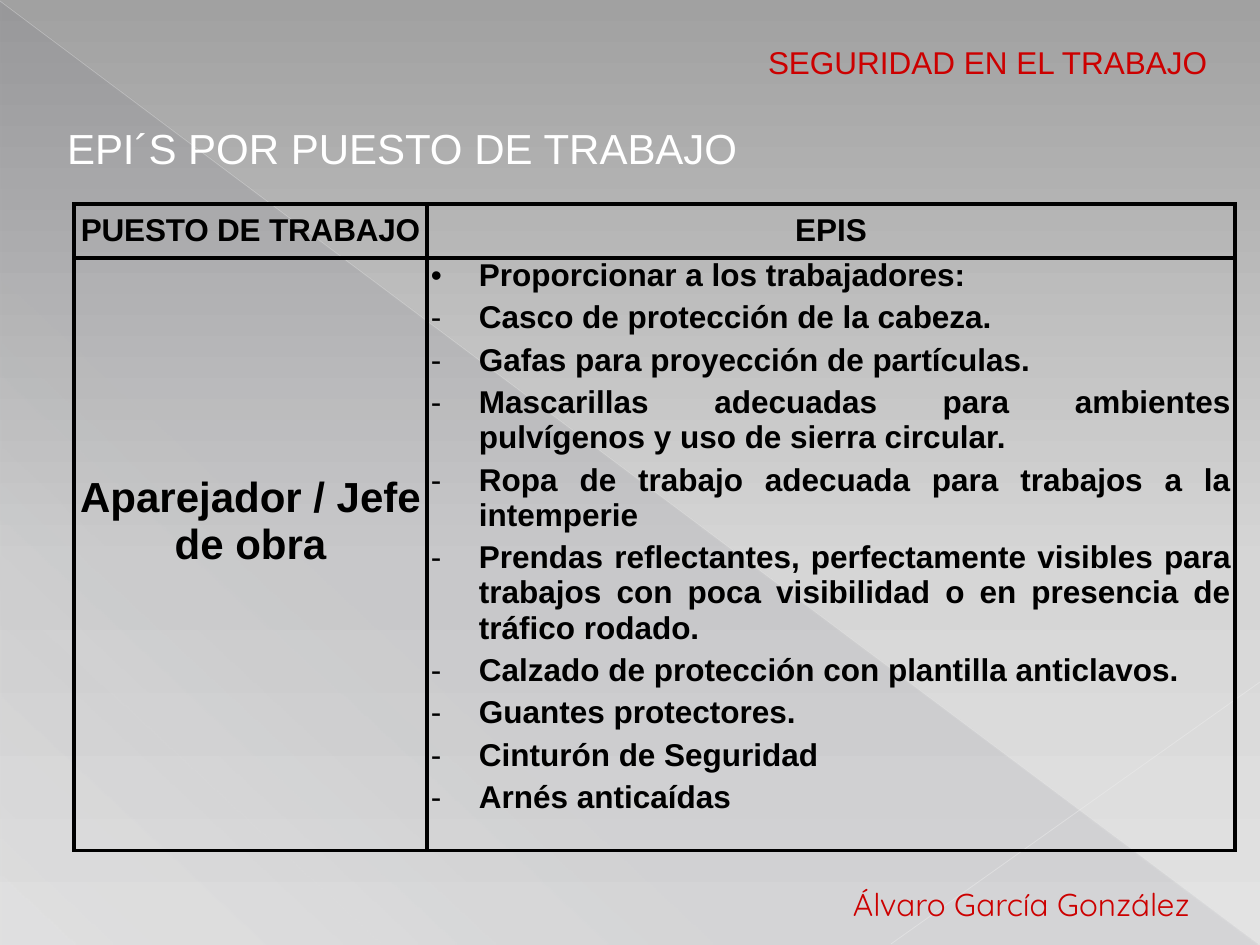
from dataclasses import dataclass

from lxml import etree
from pptx import Presentation
from pptx.dml.color import RGBColor
from pptx.enum.shapes import MSO_CONNECTOR, MSO_SHAPE
from pptx.enum.text import MSO_ANCHOR, PP_ALIGN
from pptx.oxml.ns import qn
from pptx.util import Emu, Pt

STRAIGHT = MSO_CONNECTOR.STRAIGHT
RIGHT_TRIANGLE = MSO_SHAPE.RIGHT_TRIANGLE
TOP, MIDDLE = MSO_ANCHOR.TOP, MSO_ANCHOR.MIDDLE
LEFT, CENTER, JUSTIFY = PP_ALIGN.LEFT, PP_ALIGN.CENTER, PP_ALIGN.JUSTIFY
EMU_PER_PX = 914400 / 126


@dataclass(frozen=True)
class Theme:
    body_font: str = "Arial"
    author_font: str = "Quicksand"
    ink: str = "000000"
    accent: str = "CC0000"
    title: str = "FFFFFF"
    body_size: int = 18
    title_size: int = 24
    border_width: float = 2.25
    background: tuple = ((0, "A1A1A1", 100), (60, "D6D6D6", 100), (100, "E3E3E3", 100))
    triangle: tuple = ((0, "424456", 10), (70, "424456", 8), (100, "424456", 1))


THEME = Theme()

EQUIPMENT = [
    ("•", "Proporcionar a los trabajadores:"),
    ("-", "Casco de protección de la cabeza."),
    ("-", "Gafas para proyección de partículas."),
    ("-", "Mascarillas adecuadas para ambientes pulvígenos y uso de sierra circular."),
    ("-", "Ropa de trabajo adecuada para trabajos a la intemperie"),
    ("-", "Prendas reflectantes, perfectamente visibles para trabajos con poca "
          "visibilidad o en presencia de tráfico rodado."),
    ("-", "Calzado de protección con plantilla anticlavos."),
    ("-", "Guantes protectores."),
    ("-", "Cinturón de Seguridad"),
    ("-", "Arnés anticaídas"),
]


def px(value):
    return Emu(round(value * EMU_PER_PX))


def apply_format(target, values):
    for name, value in values.items():
        setattr(target, name, value)


def add_child(parent, tag, **attributes):
    child = etree.SubElement(parent, qn(tag))
    for name, value in attributes.items():
        child.set(name, str(value))
    return child


def add_color(parent, color, opacity=100):
    element = add_child(parent, "a:srgbClr", val=color)
    if opacity < 100:
        add_child(element, "a:alpha", val=opacity * 1000)


def set_gradient(owner, fill, stops, angle):
    fill.gradient()
    gradient = owner.element.find(f".//{qn('a:gradFill')}")
    for child in list(gradient):
        gradient.remove(child)
    stop_list = add_child(gradient, "a:gsLst")
    for position, color, opacity in stops:
        add_color(add_child(stop_list, "a:gs", pos=position * 1000), color, opacity)
    add_child(gradient, "a:lin", ang=angle * 60000, scaled=0)


def add_triangle(slide, box):
    shape = slide.shapes.add_shape(RIGHT_TRIANGLE, *map(px, box))
    shape.shadow.inherit = False
    shape.line.fill.background()
    set_gradient(shape, shape.fill, THEME.triangle, 133)


def add_line(slide, ends, color, width, opacity):
    connector = slide.shapes.add_connector(STRAIGHT, *map(px, ends))
    connector.line.width = Pt(width)
    connector.line.color.rgb = RGBColor.from_string(color)
    color_element = connector.element.find(f".//{qn('a:ln')}//{qn('a:srgbClr')}")
    add_child(color_element, "a:alpha", val=opacity * 1000)
    add_child(connector.element.spPr, "a:effectLst")


def write_paragraph(paragraph, text, size=THEME.body_size, color=THEME.ink,
                    font=THEME.body_font, bold=False, **values):
    run = paragraph.add_run()
    run.text = text
    run.font.color.rgb = RGBColor.from_string(color)
    apply_format(run.font, {"size": Pt(size), "name": font, "bold": bold})
    apply_format(paragraph, values)
    return run


def add_text(slide, box, text, margin, **values):
    frame = slide.shapes.add_textbox(*map(px, box)).text_frame
    apply_format(frame, {"word_wrap": True, "margin_left": px(margin)})
    write_paragraph(frame.paragraphs[0], text, alignment=LEFT, **values)


def format_cell(cell, anchor, margin_top=0):
    apply_format(cell, {
        "vertical_anchor": anchor, "margin_left": px(4), "margin_right": px(4),
        "margin_top": px(margin_top), "margin_bottom": 0,
    })
    properties = cell._tc.get_or_add_tcPr()
    for side in ("a:lnL", "a:lnR", "a:lnT", "a:lnB"):
        border = add_child(properties, side, w=Pt(THEME.border_width))
        add_color(add_child(border, "a:solidFill"), THEME.ink)
    cell.fill.background()


def add_bullet(paragraph, mark):
    properties = paragraph._p.get_or_add_pPr()
    properties.set("marL", str(px(48)))
    properties.set("indent", str(px(-48)))
    add_child(properties, "a:buFont", typeface=THEME.body_font)
    add_child(properties, "a:buChar", char=mark)


def add_equipment_table(slide):
    columns, rows = (353, 808), (54, 592)
    table = slide.shapes.add_table(
        2, 2, px(74), px(204), px(sum(columns)), px(sum(rows))).table
    apply_format(table, {"first_row": False, "horz_banding": False})
    for column, width in zip(table.columns, columns):
        column.width = px(width)
    for row, height in zip(table.rows, rows):
        row.height = px(height)

    headings = []
    for index, text in enumerate(("PUESTO DE TRABAJO", "EPIS")):
        cell = table.cell(0, index)
        format_cell(cell, MIDDLE)
        headings.append(write_paragraph(
            cell.text_frame.paragraphs[0], text, bold=True, alignment=CENTER))
    headings[0]._r.get_or_add_rPr().set("spc", "-10")

    spacing = {"space_before": Pt(2), "space_after": Pt(2)}
    position = table.cell(1, 0)
    format_cell(position, TOP, margin_top=217)
    write_paragraph(position.text_frame.paragraphs[0], "Aparejador / Jefe de obra",
                    size=THEME.title_size, bold=True, alignment=CENTER, **spacing)

    equipment = table.cell(1, 1)
    format_cell(equipment, TOP)
    frame = equipment.text_frame
    for index, (mark, text) in enumerate(EQUIPMENT):
        paragraph = frame.add_paragraph() if index else frame.paragraphs[0]
        write_paragraph(paragraph, text, bold=True, alignment=JUSTIFY, **spacing)
        add_bullet(paragraph, mark)


def main():
    presentation = Presentation()
    apply_format(presentation, {"slide_width": px(1260), "slide_height": px(945)})
    slide = presentation.slides.add_slide(presentation.slide_layouts[6])
    set_gradient(slide, slide.background.fill, THEME.background, 90)
    add_triangle(slide, (1, 2, 1258, 943))
    add_line(slide, (0, 1, 1259, 944), "EEEEEE", 0.39, 35)
    add_line(slide, (1260, 682, 891, 944), "EFEFEF", 0.47, 45)
    add_text(slide, (730, 37, 496, 50), "SEGURIDAD EN EL TRABAJO", 38, color=THEME.accent)
    add_text(slide, (789, 879, 446, 50), "Álvaro García González", 64,
             color=THEME.accent, font=THEME.author_font)
    add_text(slide, (54, 116, 1142, 63), "EPI´S POR PUESTO DE TRABAJO", 13,
             color=THEME.title, size=THEME.title_size)
    add_equipment_table(slide)
    presentation.save("out.pptx")


if __name__ == "__main__":
    main()
